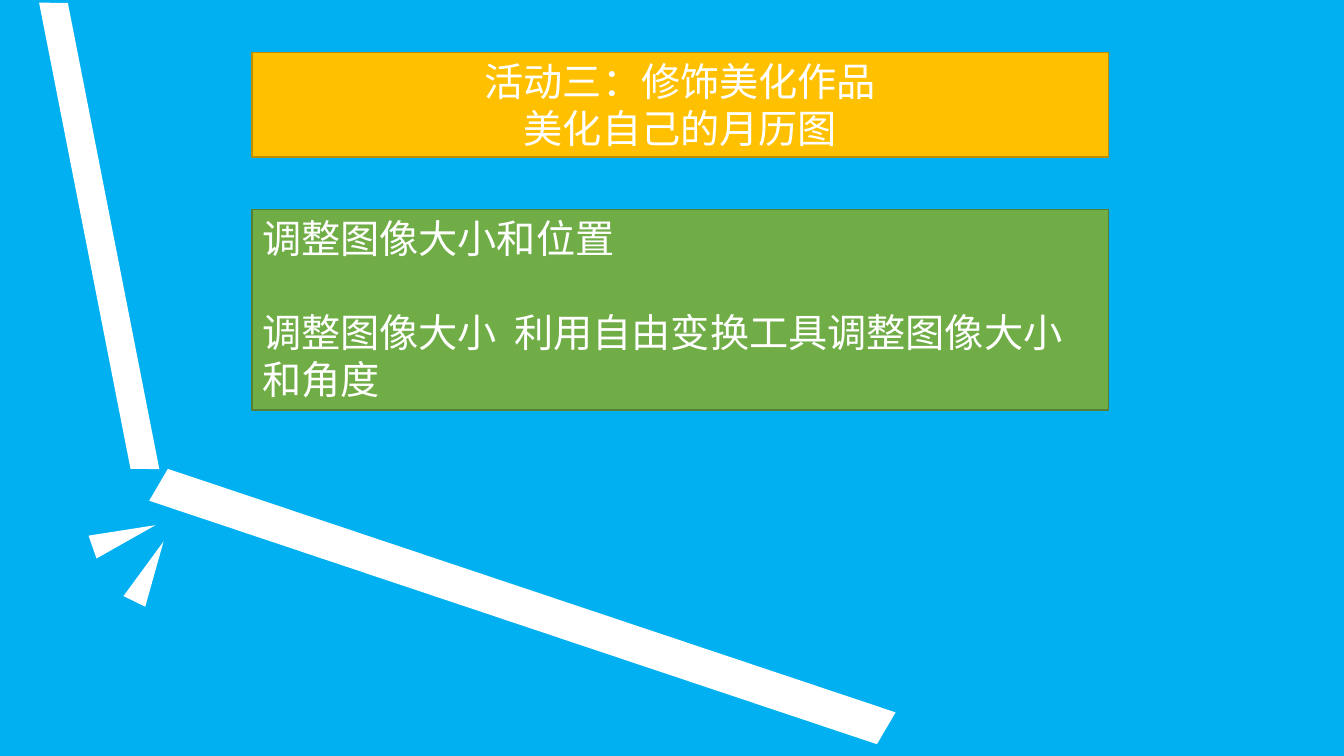
from dataclasses import dataclass

from lxml import etree
from pptx import Presentation
from pptx.dml.color import RGBColor
from pptx.enum.shapes import MSO_SHAPE
from pptx.enum.text import MSO_ANCHOR, MSO_AUTO_SIZE, PP_ALIGN
from pptx.oxml.ns import qn
from pptx.util import Cm, Pt

BAR, SPIKE = MSO_SHAPE.PARALLELOGRAM, MSO_SHAPE.ISOSCELES_TRIANGLE
LEFT, CENTER = PP_ALIGN.LEFT, PP_ALIGN.CENTER
TOP, MIDDLE = MSO_ANCHOR.TOP, MSO_ANCHOR.MIDDLE
NO_AUTOFIT = MSO_AUTO_SIZE.NONE


@dataclass(frozen=True)
class Theme:
    background: str = "00B0F0"
    white: str = "FFFFFF"
    title_fill: str = "FFC000"
    title_line: str = "BD8E00"
    body_fill: str = "70AD47"
    body_line: str = "538035"
    font: str = "Calibri"
    text_size: float = 28
    blank_line: float = 33.6


@dataclass(frozen=True)
class Box:
    """Position and size in centimetres."""
    left: float
    top: float
    width: float
    height: float


@dataclass(frozen=True)
class Stroke:
    """One white piece of the folded ray."""
    kind: MSO_SHAPE
    box: Box
    rotation: float
    slant: float | None = None


THEME = Theme()
PANEL_LEFT, PANEL_WIDTH = 6.35, 21.59
SPIKE_SIZE = (0.61, 1.68)
STROKES = [
    Stroke(BAR, Box(-3.56, 5.59, 12.12, 0.71), 78.9, 0.21),
    Stroke(BAR, Box(3.4, 14.83, 19.53, 0.91), 18.5, 0.21),
    Stroke(SPIKE, Box(2.82, 12.67, *SPIKE_SIZE), 70.8),
    Stroke(SPIKE, Box(3.45, 13.56, *SPIKE_SIZE), 26),
]


def paint(fill, color: str) -> None:
    fill.solid()
    fill.fore_color.rgb = RGBColor.from_string(color)


def draw_stroke(slide, stroke: Stroke) -> None:
    b = stroke.box
    sp = slide.shapes.add_shape(stroke.kind, Cm(b.left), Cm(b.top), Cm(b.width), Cm(b.height))
    sp.rotation = stroke.rotation
    if stroke.slant is not None:
        sp.adjustments[0] = stroke.slant
    sp.shadow.inherit = False
    paint(sp.fill, THEME.white)
    sp.line.fill.background()


def write(tf, lines: list[str], *, align=LEFT, anchor=TOP, gap: float = 0) -> None:
    """Fill a text frame with unbulleted paragraphs, gap points apart."""
    tf.word_wrap = True
    tf.auto_size = NO_AUTOFIT
    tf.vertical_anchor = anchor
    for i, line in enumerate(lines):
        p = tf.paragraphs[0] if i == 0 else tf.add_paragraph()
        p.alignment = align
        p.space_before = Pt(gap if i else 0)
        p_pr = p._p.get_or_add_pPr()
        p_pr.set("marL", "0")
        p_pr.set("indent", "0")
        etree.SubElement(p_pr, qn("a:buNone"))
        r = p.add_run()
        r.text = line
        r.font.name = THEME.font
        r.font.size = Pt(THEME.text_size)
        r.font.color.rgb = RGBColor.from_string(THEME.white)


def format_panel(sp, box: Box, fill: str, line: str) -> None:
    sp.left, sp.top = Cm(box.left), Cm(box.top)
    sp.width, sp.height = Cm(box.width), Cm(box.height)
    paint(sp.fill, fill)
    paint(sp.line.fill, line)
    sp.line.width = Pt(1)


def main() -> None:
    prs = Presentation()
    prs.slide_width, prs.slide_height = Cm(33.87), Cm(19.05)
    slide = prs.slides.add_slide(prs.slide_layouts[1])
    paint(slide.background.fill, THEME.background)

    for stroke in STROKES:
        draw_stroke(slide, stroke)

    title, body = slide.placeholders[0], slide.placeholders[1]
    format_panel(title, Box(PANEL_LEFT, 1.32, PANEL_WIDTH, 2.64),
                 THEME.title_fill, THEME.title_line)
    write(title.text_frame, ["活动三：修饰美化作品", "美化自己的月历图"],
          align=CENTER, anchor=MIDDLE)
    format_panel(body, Box(PANEL_LEFT, 5.28, PANEL_WIDTH, 5.05),
                 THEME.body_fill, THEME.body_line)
    write(body.text_frame,
          ["调整图像大小和位置", "调整图像大小  利用自由变换工具调整图像大小和角度"],
          gap=THEME.blank_line)

    prs.save("out.pptx")


if __name__ == "__main__":
    main()
